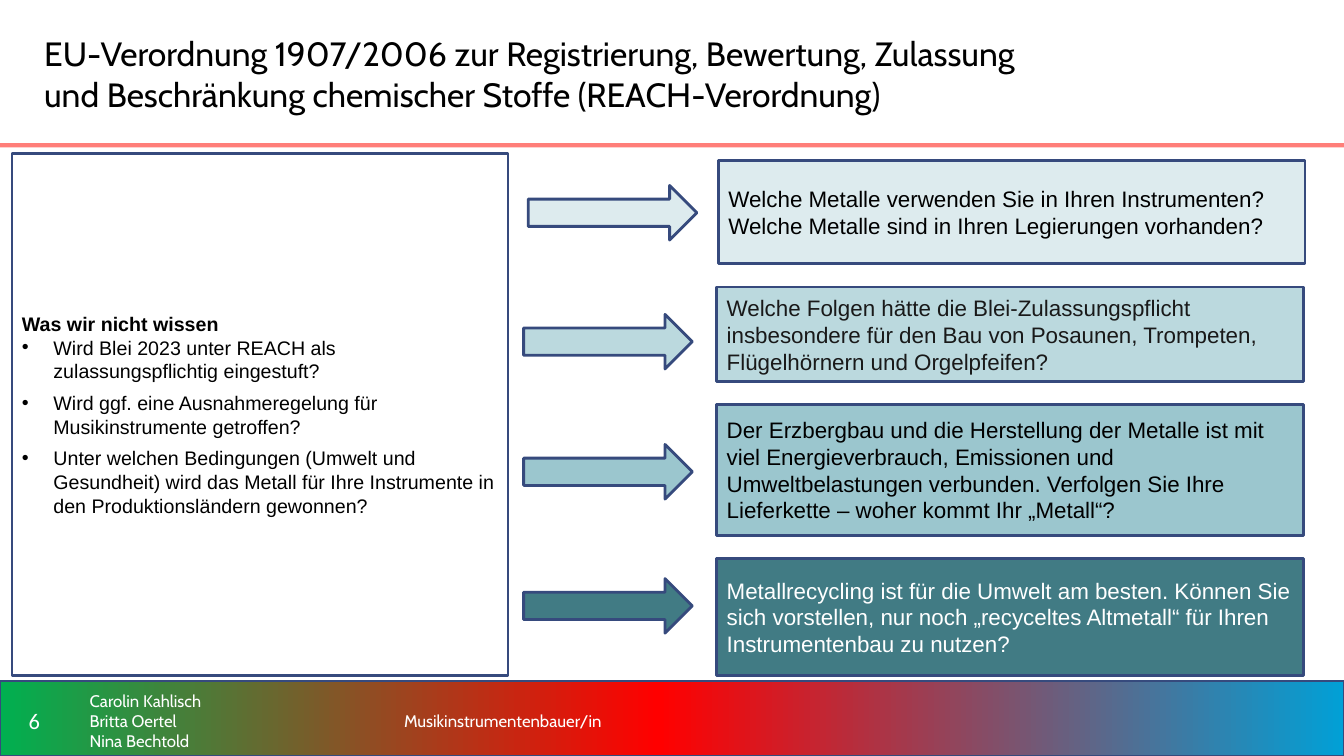
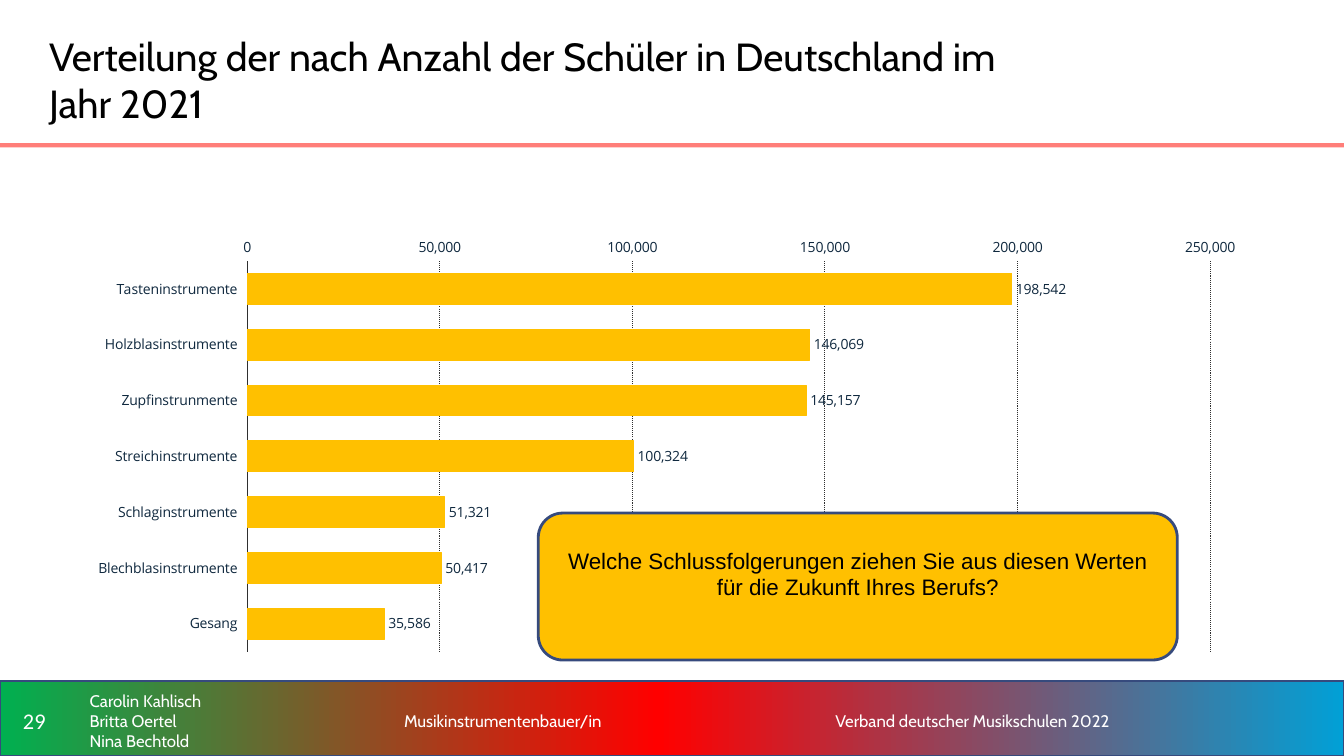
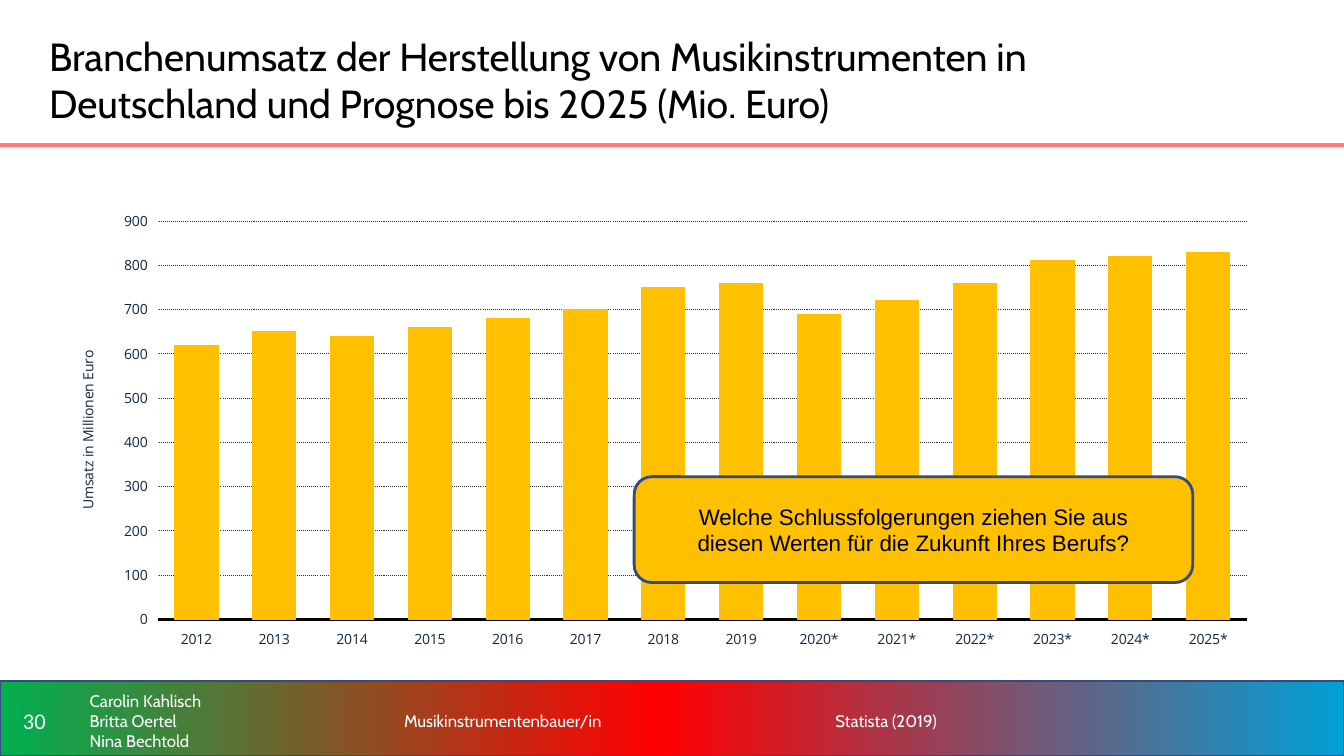
from copy import deepcopy

from lxml import etree
from pptx import Presentation
from pptx.chart.data import CategoryChartData
from pptx.dml.color import RGBColor
from pptx.enum.chart import XL_CHART_TYPE, XL_LABEL_POSITION, XL_TICK_LABEL_POSITION, XL_TICK_MARK
from pptx.enum.dml import MSO_LINE
from pptx.enum.shapes import MSO_SHAPE
from pptx.enum.text import MSO_ANCHOR, PP_ALIGN
from pptx.oxml.ns import qn
from pptx.util import Pt

BAR, COLUMN = XL_CHART_TYPE.BAR_CLUSTERED, XL_CHART_TYPE.COLUMN_CLUSTERED
RECT, ROUNDED, ARROW = MSO_SHAPE.RECTANGLE, MSO_SHAPE.ROUNDED_RECTANGLE, MSO_SHAPE.RIGHT_ARROW
LEFT, CENTER, MIDDLE = PP_ALIGN.LEFT, PP_ALIGN.CENTER, MSO_ANCHOR.MIDDLE
LOW, NO_TICK = XL_TICK_LABEL_POSITION.LOW, XL_TICK_MARK.NONE
OUTSIDE, DOTS = XL_LABEL_POSITION.OUTSIDE_END, MSO_LINE.ROUND_DOT

BLACK, WHITE, NAVY, CORAL, AMBER = "000000", "FFFFFF", "364A7D", "FF7E79", "FFC000"
AXIS_TEXT, GRID = "0F283E", "2F2F2F"
BAND = [(0, "00B050"), (0.49, "FF0000"), (1, "01A0D6")]
HEADING, BODY, NUMBER, CHART = "Cabin", "Arial", "Calibri", "Open Sans"


def rgb(value):
    """Turn a hex string into a colour."""
    return RGBColor.from_string(value)


class Slides:
    """Hold the shared style and the current page."""

    def __init__(self):
        """Start a widescreen deck."""
        self.deck = Presentation()
        self.deck.slide_width, self.deck.slide_height = Pt(960), Pt(540)
        self.page = None

    def new_page(self, number, title, at, size, source=None):
        """Add a page with title, stripe and footer."""
        self.page = self.deck.slides.add_slide(self.deck.slide_layouts[6])
        self.footer_band()
        self.shape(RECT, (0, 102.3, 960, 3), CORAL, line=None)
        self.text_box((0, 492.5, 49, 44), [number], 16, NUMBER, WHITE, align=CENTER)
        self.text_box(at, [title], size, HEADING, BLACK)
        self.text_box((57, 492.5, 200, 44.5), ["Carolin Kahlisch", "Britta Oertel", "Nina Bechtold"],
                      12, HEADING, WHITE)
        self.text_box((281.5, 492.5, 284, 44), ["Musikinstrumentenbauer/in"], 12, HEADING, WHITE, spacing=1.1)
        if source:
            self.text_box((589.7, 492.5, 346, 44), [source], 12, HEADING, WHITE, spacing=1.1)

    def footer_band(self):
        """Draw the three-colour band along the bottom."""
        band = self.shape(RECT, (0, 486.5, 960, 53.5), WHITE, width=1)
        band.fill.gradient()
        band.fill.gradient_angle = 0
        stops = band.element.spPr.find(qn("a:gradFill")).find(qn("a:gsLst"))
        stops.append(deepcopy(stops[-1]))
        for stop, (position, color) in zip(band.fill.gradient_stops, BAND):
            stop.position = position
            stop.color.rgb = rgb(color)

    def shape(self, kind, at, fill=None, line=NAVY, width=2):
        """Add a preset shape with flat fill and outline."""
        shape = self.page.shapes.add_shape(kind, *map(Pt, at))
        shape.shadow.inherit = False
        if fill:
            shape.fill.solid()
            shape.fill.fore_color.rgb = rgb(fill)
        else:
            shape.fill.background()
        if line:
            shape.line.color.rgb = rgb(line)
            shape.line.width = Pt(width)
        else:
            shape.line.fill.background()
        return shape

    def text_box(self, at, lines, size, font, color, **options):
        """Add a text box without outline."""
        box = self.page.shapes.add_textbox(*map(Pt, at))
        self.add_text(box.text_frame, lines, size, font, color, **options)

    def add_text(self, frame, lines, size, font, color, align=LEFT, spacing=None, bullets=False):
        """Fill a frame; with bullets, the first line is a bold heading."""
        frame.word_wrap = True
        frame.vertical_anchor = MIDDLE
        for index, line in enumerate(lines):
            para = frame.add_paragraph() if index else frame.paragraphs[0]
            para.alignment = align
            if spacing:
                para.line_spacing = spacing
            if bullets and index:
                self.bullet(para, color)
                para.space_before = Pt(6 if index > 1 else 0)
            span = para.add_run()
            span.text = line
            span.font.size, span.font.name = Pt(size), font
            span.font.bold = bullets and index == 0
            span.font.color.rgb = rgb(color)

    def bullet(self, para, color):
        """Give a paragraph a hanging bullet."""
        props = para._p.get_or_add_pPr()
        props.set("marL", str(Pt(22.5)))
        props.set("indent", str(-Pt(22.5)))
        paint = etree.SubElement(props, qn("a:buClr"))
        etree.SubElement(paint, qn("a:srgbClr"), val=color)
        etree.SubElement(props, qn("a:buFont"), typeface=BODY)
        etree.SubElement(props, qn("a:buChar"), char="•")

    def callout(self, at, side, bottom=3.6):
        """Add the rounded question box."""
        box = self.shape(ROUNDED, at, AMBER)
        frame = box.text_frame
        frame.margin_left = frame.margin_right = Pt(side)
        frame.margin_bottom = Pt(bottom)
        question = "Welche Schlussfolgerungen ziehen Sie aus diesen Werten für die Zukunft Ihres Berufs?"
        self.add_text(frame, [question], 16, BODY, BLACK, align=CENTER)

    def chart_font(self, font):
        """Set the small chart lettering."""
        font.size, font.name = Pt(10), CHART
        font.color.rgb = rgb(AXIS_TEXT)

    def chart(self, kind, at, values, top, step, axis_line, axis_width):
        """Add a one-series chart with dotted grid lines."""
        data = CategoryChartData(number_format="#,##0")
        data.categories = list(values)
        data.add_series("Series 1", list(values.values()))
        chart = self.page.shapes.add_chart(kind, *map(Pt, at), data).chart
        chart.has_legend = chart.has_title = False
        self.chart_font(chart.font)
        plot = chart.plots[0]
        plot.gap_width, plot.overlap, plot.vary_by_categories = 80, -30, False
        series = plot.series[0]
        series.invert_if_negative = False
        series.format.fill.solid()
        series.format.fill.fore_color.rgb = rgb(AMBER)
        series.format.line.color.rgb = rgb(AMBER)
        series.format.line.width = Pt(0.75)
        names, scale = chart.category_axis, chart.value_axis
        for axis in (names, scale):
            axis.major_tick_mark = axis.minor_tick_mark = NO_TICK
            self.chart_font(axis.tick_labels.font)
        names.tick_label_position = LOW
        names.format.line.color.rgb = rgb(axis_line)
        names.format.line.width = Pt(axis_width)
        scale.minimum_scale, scale.maximum_scale, scale.major_unit = 0, top, step
        scale.tick_labels.number_format = "#,##0"
        scale.tick_labels.number_format_is_linked = False
        scale.format.line.fill.background()
        scale.has_major_gridlines = True
        grid = scale.major_gridlines.format.line
        grid.color.rgb = rgb(GRID)
        grid.width, grid.dash_style = Pt(0.75), DOTS
        return chart

    def value_labels(self, chart):
        """Show each value beyond the end of its bar."""
        labels = chart.plots[0].series[0].data_labels
        labels.show_value = True
        labels.position = OUTSIDE
        labels.number_format, labels.number_format_is_linked = "#,##0", False
        self.chart_font(labels.font)

    def axis_title(self, axis, text):
        """Name a value axis."""
        span = axis.axis_title.text_frame.paragraphs[0].add_run()
        span.text = text
        span.font.bold = False
        self.chart_font(span.font)

    def plot_area(self, chart, x, y, w, h):
        """Fix the inner plot area as shares of the chart."""
        area = chart._chartSpace.find(qn("c:chart")).find(qn("c:plotArea"))
        for layout in area.findall(qn("c:layout")):
            area.remove(layout)
        layout = etree.Element(qn("c:layout"))
        area.insert(0, layout)
        manual = etree.SubElement(layout, qn("c:manualLayout"))
        settings = dict(layoutTarget="inner", xMode="edge", yMode="edge", x=x, y=y, w=w, h=h)
        for name, value in settings.items():
            etree.SubElement(manual, qn("c:" + name), val=str(value))


def reach_page(slides):
    """Build the page on the REACH regulation."""
    slides.new_page("6", "EU-Verordnung 1907/2006 zur Registrierung, Bewertung, Zulassung und Beschränkung "
                    "chemischer Stoffe (REACH-Verordnung)", (24.5, 10, 708.5, 85), 24)
    unknowns = slides.shape(RECT, (8.6, 109.5, 354.4, 373))
    slides.add_text(unknowns.text_frame, [
        "Was wir nicht wissen",
        "Wird Blei 2023 unter REACH als zulassungspflichtig eingestuft?",
        "Wird ggf. eine Ausnahmeregelung für Musikinstrumente getroffen?",
        "Unter welchen Bedingungen (Umwelt und Gesundheit) wird das Metall für Ihre Instrumente in den "
        "Produktionsländern gewonnen?",
    ], 14, BODY, BLACK, bullets=True)
    questions = [
        (377.3, 132.5, 513.2, 114.5, 73.5, "DDEBEE", BLACK,
         ["Welche Metalle verwenden Sie in Ihren Instrumenten?",
          "Welche Metalle sind in Ihren Legierungen vorhanden?"]),
        (374, 224.6, 512, 205, 67.7, "BBD9DE", "191919",
         ["Welche Folgen hätte die Blei-Zulassungspflicht insbesondere für den Bau von Posaunen, "
          "Trompeten, Flügelhörnern und Orgelpfeifen?"]),
        (374, 317.5, 512, 288.7, 93.6, "9BC6CE", BLACK,
         ["Der Erzbergbau und die Herstellung der Metalle ist mit viel Energieverbrauch, Emissionen und "
          "Umweltbelastungen verbunden. Verfolgen Sie Ihre Lieferkette – woher kommt Ihr „Metall“?"]),
        (374, 413.3, 512, 399, 83.5, "417B84", WHITE,
         ["Metallrecycling ist für die Umwelt am besten. Können Sie sich vorstellen, nur noch "
          "„recyceltes Altmetall“ für Ihren Instrumentenbau zu nutzen?"]),
    ]
    for arrow_left, arrow_top, left, top, height, fill, color, lines in questions:
        slides.shape(ARROW, (arrow_left, arrow_top, 120.5, 39), fill)
        box = slides.shape(RECT, (left, top, 419, height), fill)
        slides.add_text(box.text_frame, lines, 16, BODY, color)


def students_page(slides):
    """Build the page on students per instrument group."""
    slides.new_page("29", "Verteilung der nach Anzahl der Schüler in Deutschland im Jahr 2021",
                    (28, 14.4, 708.5, 85), 28, "Verband deutscher Musikschulen 2022")
    students = {"Tasteninstrumente": 198542, "Holzblasinstrumente": 146069, "Zupfinstrunmente": 145157,
                "Streichinstrumente": 100324, "Schlaginstrumente": 51321, "Blechblasinstrumente": 50417,
                "Gesang": 35586}
    chart = slides.chart(BAR, (53.3, 164, 846, 307.5), students, 250000, 50000, GRID, 0.75)
    chart.category_axis.reverse_order = True
    slides.value_labels(chart)
    slides.callout((384.5, 366.5, 456.5, 105), 12, bottom=22)


def revenue_page(slides):
    """Build the page on industry revenue."""
    slides.new_page("30", "Branchenumsatz der Herstellung von Musikinstrumenten in Deutschland und Prognose "
                    "bis 2025 (Mio. Euro)", (28, 14.4, 723, 85), 28, "Statista (2019)")
    amounts = [620, 650, 640, 660, 680, 700, 750, 760, 690, 720, 760, 810, 820, 830]
    revenue = {f"{year}*" if year > 2019 else str(year): amount for year, amount in enumerate(amounts, 2012)}
    chart = slides.chart(COLUMN, (53.3, 148.3, 846, 323.3), revenue, 900, 100, BLACK, 2)
    chart.value_axis.tick_label_position = LOW
    slides.axis_title(chart.value_axis, "Umsatz in Millionen Euro")
    slides.plot_area(chart, 0.07, 0.03, 0.92, 0.88)
    slides.callout((453, 340.5, 399, 75.6), 36)


def main():
    """Build and save the deck."""
    slides = Slides()
    reach_page(slides)
    students_page(slides)
    revenue_page(slides)
    slides.deck.save("out.pptx")


if __name__ == "__main__":
    main()
